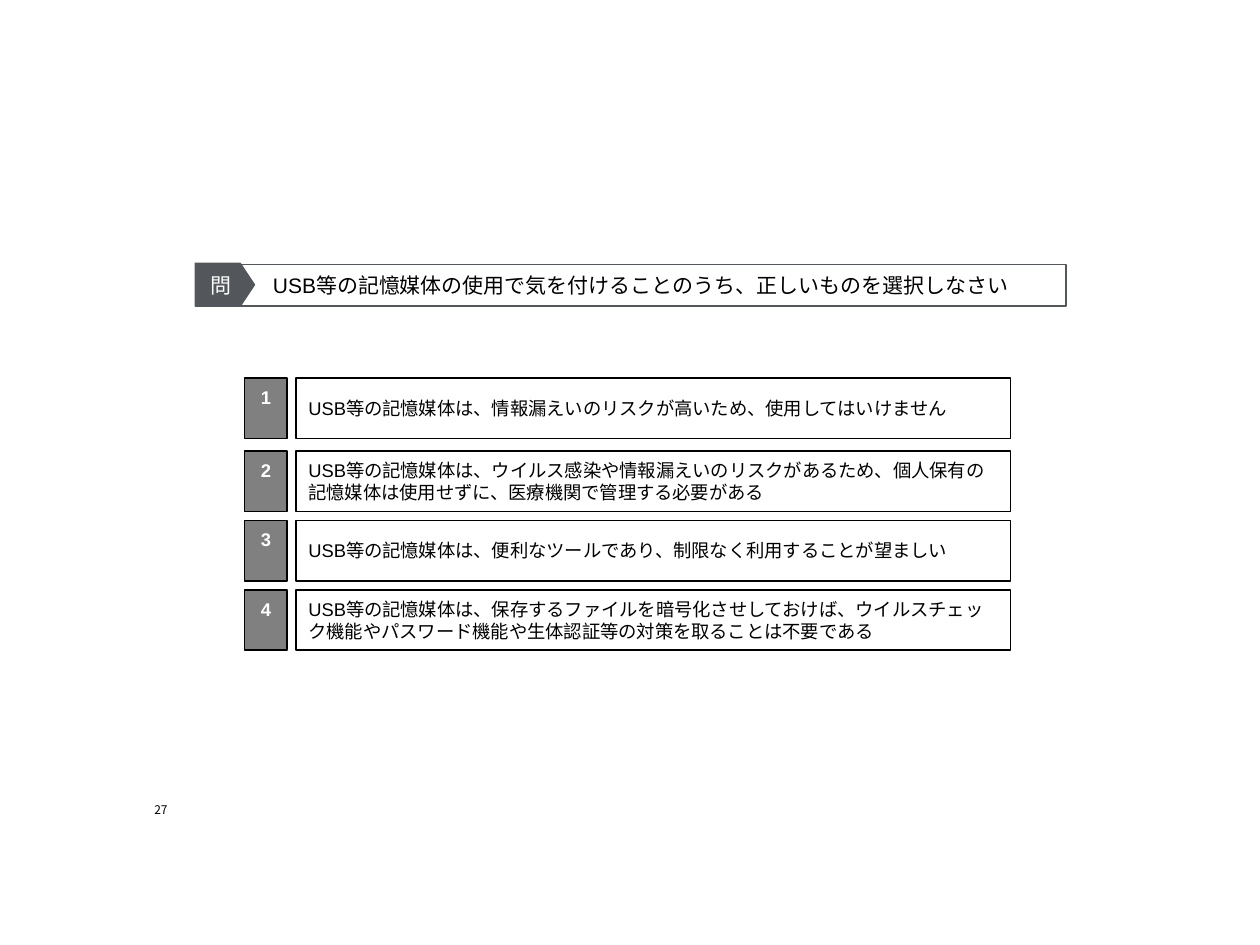
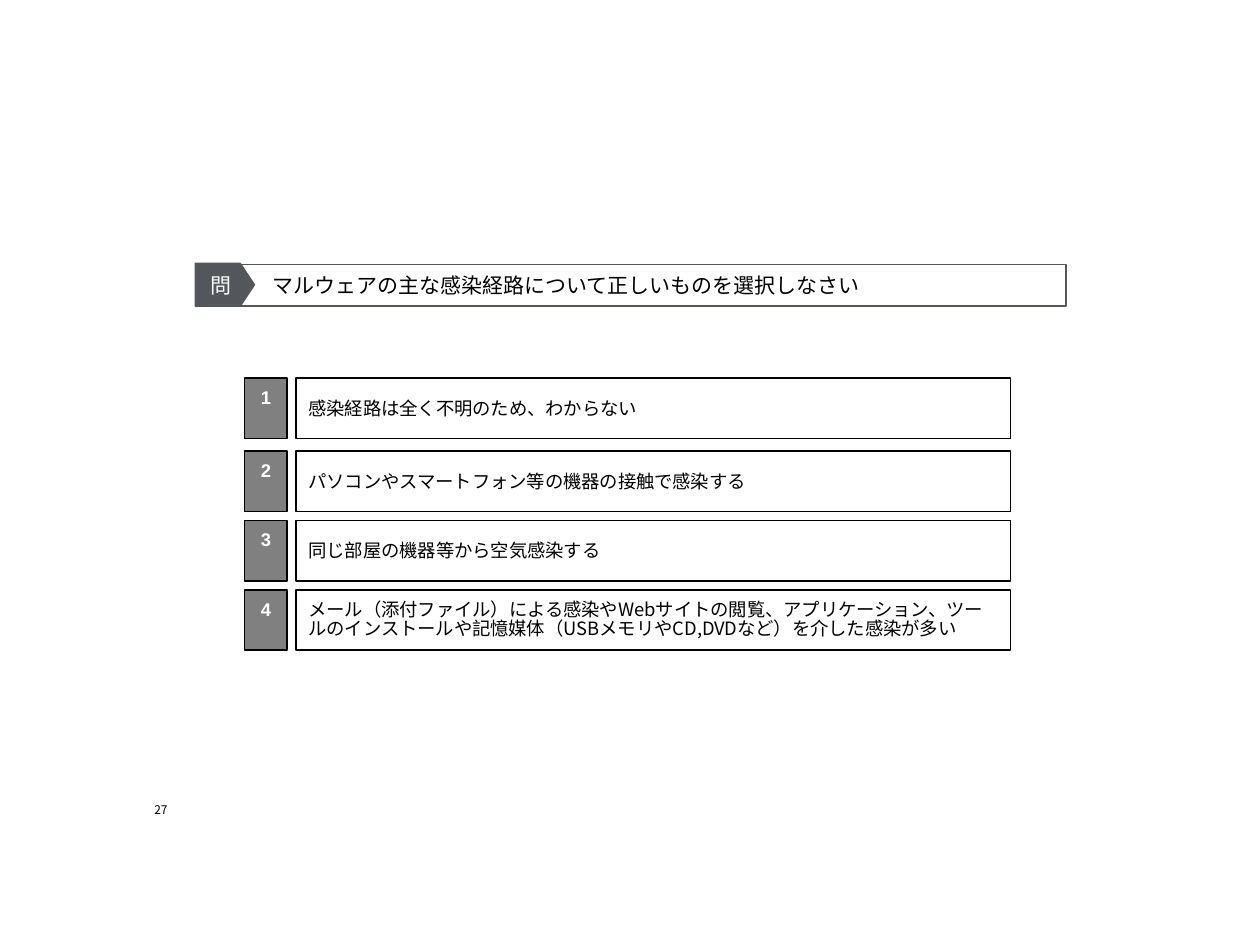
"""Build two quiz slides, each with a question bar and four numbered answers."""
from lxml.etree import SubElement
from pptx import Presentation
from pptx.dml.color import RGBColor
from pptx.enum.shapes import MSO_SHAPE
from pptx.enum.text import MSO_ANCHOR, PP_ALIGN
from pptx.oxml.ns import qn
from pptx.util import Inches, Pt

DARK, GREY, BLACK, WHITE = "53565A", "808080", "000000", "FFFFFF"
LATIN, ASIAN = "Arial", "Noto Sans CJK JP"
TOPS = (3, 3.58, 4.13, 4.68)
HIGH = 0.48

QUIZ = [
    ("USB等の記憶媒体の使用で気を付けることのうち、正しいものを選択しなさい", [
        "USB等の記憶媒体は、情報漏えいのリスクが高いため、使用してはいけません",
        "USB等の記憶媒体は、ウイルス感染や情報漏えいのリスクがあるため、"
        "個人保有の記憶媒体は使用せずに、医療機関で管理する必要がある",
        "USB等の記憶媒体は、便利なツールであり、制限なく利用することが望ましい",
        "USB等の記憶媒体は、保存するファイルを暗号化させしておけば、"
        "ウイルスチェック機能やパスワード機能や生体認証等の対策を取ることは不要である",
    ]),
    ("マルウェアの主な感染経路について正しいものを選択しなさい", [
        "感染経路は全く不明のため、わからない",
        "パソコンやスマートフォン等の機器の接触で感染する",
        "同じ部屋の機器等から空気感染する",
        "メール（添付ファイル）による感染やWebサイトの閲覧、アプリケーション、"
        "ツールのインストールや記憶媒体（USBメモリやCD,DVDなど）を介した感染が多い",
    ]),
]


def write(shape, text, size, color=BLACK, face=LATIN, align=PP_ALIGN.LEFT, bold=False):
    frame = shape.text_frame
    frame.text = text
    frame.word_wrap = True
    frame.vertical_anchor = MSO_ANCHOR.MIDDLE
    frame.paragraphs[0].alignment = align
    font = frame.paragraphs[0].runs[0].font
    font.size, font.bold, font.name = Pt(size), bold, face
    font.color.rgb = RGBColor.from_string(color)
    SubElement(font._element, qn("a:ea")).set("typeface", ASIAN)
    return frame


def draw(slide, kind, box, fill, line, width=1):
    shape = slide.shapes.add_shape(kind, *map(Inches, box))
    shape.shadow.inherit = False
    if fill:
        shape.fill.solid()
        shape.fill.fore_color.rgb = RGBColor.from_string(fill)
    else:
        shape.fill.background()
    shape.line.color.rgb = RGBColor.from_string(line)
    shape.line.width = Pt(width)
    return shape


deck = Presentation()
deck.slide_width, deck.slide_height = Inches(10), Inches(7.5)

for query, answers in QUIZ:
    slide = deck.slides.add_slide(deck.slide_layouts[6])

    page = slide.shapes.add_textbox(*map(Inches, (1.18, 6.34, 0.15, 0.14)))
    frame = write(page, "27", 6.8, face=ASIAN, align=PP_ALIGN.RIGHT)
    frame.word_wrap = False
    frame.vertical_anchor = MSO_ANCHOR.BOTTOM
    frame.margin_left = frame.margin_right = frame.margin_top = frame.margin_bottom = 0

    bar = draw(slide, MSO_SHAPE.RECTANGLE, (1.79, 2.1, 6.67, 0.33), WHITE, DARK)
    frame = write(bar, "　" + query, 12)
    frame.margin_left = Inches(0.21)
    frame.margin_right = frame.margin_top = frame.margin_bottom = Inches(0.03)

    tag = draw(slide, MSO_SHAPE.PENTAGON, (1.55, 2.09, 0.47, 0.34), DARK, DARK, 0.75)
    tag.adjustments[0] = 0.33
    write(tag, "問", 12, WHITE, ASIAN, PP_ALIGN.CENTER).word_wrap = False

    for num, (top, answer) in enumerate(zip(TOPS, answers), 1):
        row = draw(slide, MSO_SHAPE.RECTANGLE, (2.35, top, 5.67, HIGH), None, BLACK)
        frame = write(row, answer, 10.5, face=ASIAN if "Web" in answer else LATIN)
        if "Web" in answer:
            frame.paragraphs[0].line_spacing = Pt(11.2)
        badge = draw(slide, MSO_SHAPE.RECTANGLE, (1.94, top, 0.34, HIGH), GREY, BLACK)
        write(badge, f"{num}　", 10.5, WHITE, align=PP_ALIGN.CENTER, bold=True)

deck.save("out.pptx")
